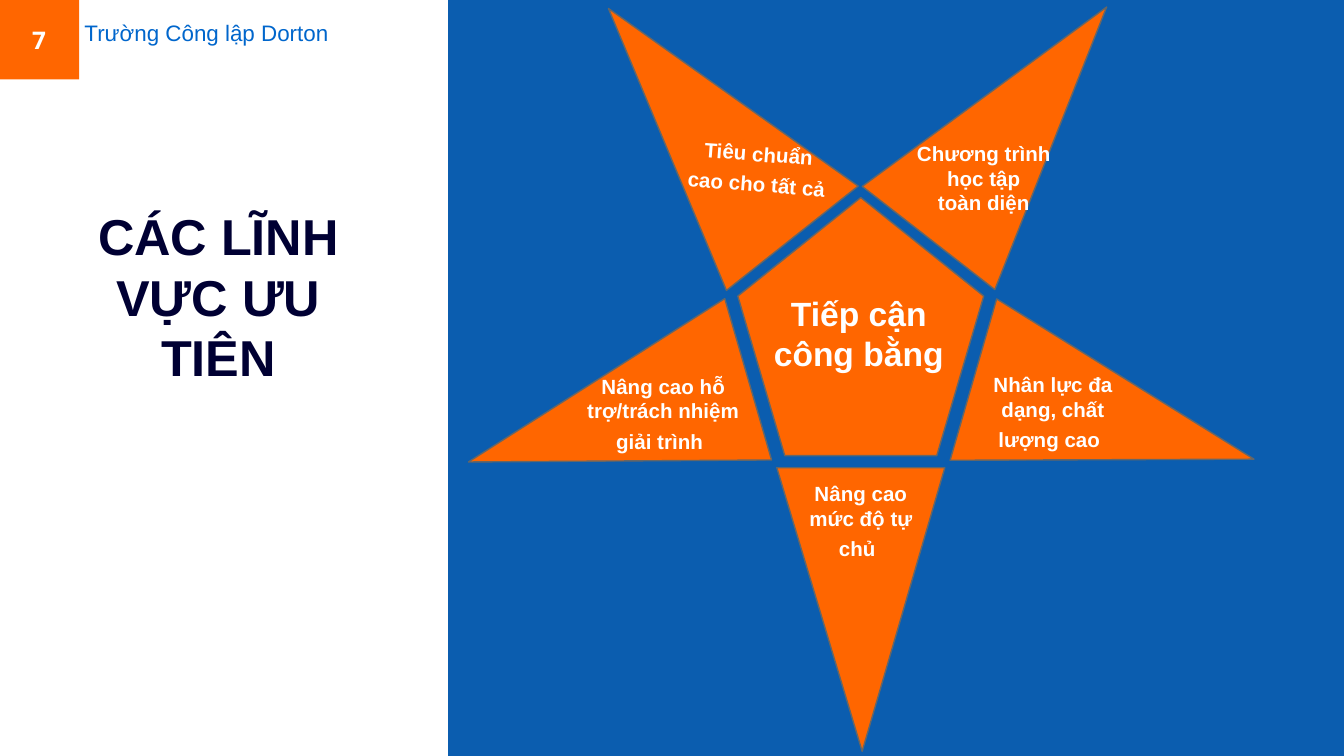
from lxml.etree import SubElement
from pptx import Presentation
from pptx.dml.color import RGBColor
from pptx.enum.shapes import MSO_SHAPE as Shape
from pptx.enum.text import MSO_ANCHOR as Anchor, PP_ALIGN as Align
from pptx.oxml.ns import qn
from pptx.util import Inches, Pt

SLIDE_WIDTH = 10
SLIDE_HEIGHT = SLIDE_WIDTH * 9 / 16
SIDEBAR_WIDTH = SLIDE_WIDTH / 3

COLORS = {
    "navy": "294667",
    "blue": "0066CC",
    "orange": "FF6600",
    "outline": "666666",
    "title": "000033",
    "white": "FFFFFF",
    "black": "000000",
}

STAR_POINTS = [
    ((3.9, 2.04, 1.25, 2.17), 253.8,
     ["Nâng cao hỗ trợ/trách nhiệm giải trình"], (4.18, 2.68, 1.51, 0.51), 0, True),
    ((7.66, 2.04, 1.25, 2.17), 106.1,
     ["Nhân lực đa dạng, chất lượng cao"], (7.15, 2.67, 1.37, 0.65), 0, True),
    ((5.78, 3.48, 1.25, 2.11), 180,
     ["Nâng cao mức độ tự chủ"], (5.78, 3.48, 1.25, 0.84), 0, True),
    ((6.95, -0.17, 1.25, 2.17), 37.9,
     ["Chương trình học tập", "toàn diện"], (6.68, 0.95, 1.28, 0.7), 0, False),
    ((4.59, -0.18, 1.25, 2.19), 321.6,
     ["Tiêu chuẩn cao cho tất cả"], (5.02, 0.95, 1.23, 0.67), 4.3, True),
]


def rgb(name):
    return RGBColor.from_string(COLORS[name])


def add_run(paragraph, text, size, color, font, bold):
    run = paragraph.add_run()
    run.text = text
    run.font.size = Pt(size)
    run.font.name = font
    run.font.bold = bold
    run.font.color.rgb = rgb(color)


def write_text(shape, lines, size=11, color="white", font="Arial", bold=True,
               align=Align.CENTER, anchor=Anchor.TOP, trailing_space=False):
    frame = shape.text_frame
    frame.word_wrap = True
    frame.vertical_anchor = anchor
    frame.margin_left = frame.margin_right = Inches(0.1)
    frame.margin_top = frame.margin_bottom = Inches(0.1)
    for index, line in enumerate(lines):
        paragraph = frame.paragraphs[0] if index == 0 else frame.add_paragraph()
        paragraph.alignment = align
        add_run(paragraph, line, size, color, font, bold)
    if trailing_space:
        add_run(paragraph, " ", 14, "black", font, False)


class SlideBuilder:
    def __init__(self, slide):
        self.slide = slide
        self.shapes = slide.shapes

    def background(self, color):
        fill = self.slide.background.fill
        fill.solid()
        fill.fore_color.rgb = rgb(color)

    def block(self, kind, box, fill, outline=None, rotation=0, opacity=None, parent=None):
        shape = (parent or self.shapes).add_shape(kind, *map(Inches, box))
        shape.shadow.inherit = False
        shape.rotation = rotation
        shape.fill.solid()
        shape.fill.fore_color.rgb = rgb(fill)
        if opacity is not None:
            color = shape.fill._xPr.find(qn("a:solidFill"))[0]
            SubElement(color, qn("a:alpha"), val=str(opacity * 1000))
        if outline:
            shape.line.color.rgb = rgb(outline)
            shape.line.width = Pt(0.75)
        else:
            shape.line.fill.background()
        return shape

    def text(self, lines, box, rotation=0, parent=None, **style):
        shape = (parent or self.shapes).add_textbox(*map(Inches, box))
        shape.rotation = rotation
        write_text(shape, lines, **style)

    def star_point(self, box, rotation, lines, label_box, label_rotation, trailing_space):
        group = self.shapes.add_group_shape().shapes
        triangle = self.block(Shape.ISOSCELES_TRIANGLE, box, "orange", "outline",
                              rotation, parent=group)
        triangle.adjustments[0] = 0.492
        self.text(lines, label_box, label_rotation, group, trailing_space=trailing_space)

    def star_center(self, lines, box, label_box):
        group = self.shapes.add_group_shape().shapes
        self.block(Shape.REGULAR_PENTAGON, box, "orange", "outline", parent=group)
        self.text(lines, label_box, parent=group, size=18)


def main():
    presentation = Presentation()
    presentation.slide_width = Inches(SLIDE_WIDTH)
    presentation.slide_height = Inches(SLIDE_HEIGHT)
    builder = SlideBuilder(presentation.slides.add_slide(presentation.slide_layouts[6]))

    builder.background("navy")
    builder.block(Shape.RECTANGLE, (0, 0, SIDEBAR_WIDTH, SLIDE_HEIGHT), "white")
    builder.block(Shape.RECTANGLE,
                  (SIDEBAR_WIDTH, 0, SLIDE_WIDTH - SIDEBAR_WIDTH, SLIDE_HEIGHT),
                  "blue", opacity=72)
    builder.text(["CÁC LĨNH VỰC ƯU TIÊN"], (0.45, 2.24, 2.35, 0.74),
                 size=27, color="title", anchor=Anchor.BOTTOM)
    page_number = builder.block(Shape.RECTANGLE, (-0.01, 0, 0.6, 0.59), "orange")
    write_text(page_number, ["7"], size=13, font="Open Sans", anchor=Anchor.MIDDLE)
    builder.text(["Trường Công lập Dorton"], (0.53, 0.04, 2.78, 0.51),
                 size=12, color="blue", bold=False, align=Align.LEFT)

    for point in STAR_POINTS[:2]:
        builder.star_point(*point)
    builder.star_center(["Tiếp cận công bằng"], (5.49, 1.47, 1.83, 1.92),
                        (5.59, 2.08, 1.6, 0.71))
    for point in STAR_POINTS[2:]:
        builder.star_point(*point)

    presentation.save("out.pptx")


if __name__ == "__main__":
    main()
